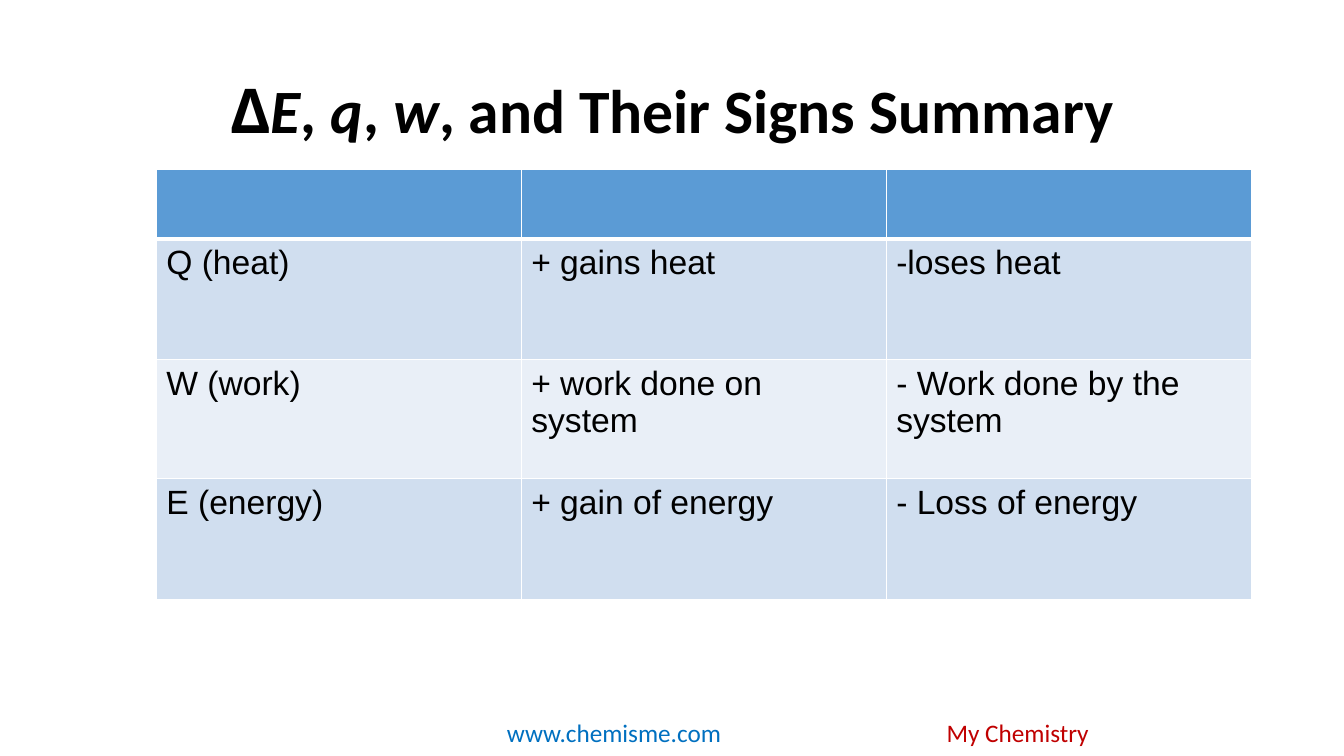
import pptx
import pptx.util
import pptx.dml.color
import pptx.enum.text
import pptx.oxml
import pptx.oxml.ns
from pptx.util import Inches

# Content
TITLE = [("Δ", False, "Open Sans"), ("E", True, "Calibri"), (", ", False, "Calibri"),
         ("q", True, "Calibri"), (", ", False, "Calibri"), ("w", True, "Calibri"),
         (", and Their Signs Summary", False, "Calibri")]
ROWS = [
    ("", "", ""),
    ("Q (heat)", "+ gains heat", "-loses heat"),
    ("W (work)", "+ work done on system", "- Work done by the system"),
    ("E (energy)", "+ gain of energy", "- Loss of energy"),
]
FOOTERS = [("www.chemisme.com", 4.93, "0070C0"), ("My Chemistry", 9.29, "C00000")]

# Table layout
COL_WIDTH = 3.62
ROW_HEIGHTS = [0.69, 1.2, 1.18, 1.2]
HEADER, BAND_DARK, BAND_LIGHT = "5B9BD5", "D0DEEF", "E9EFF7"


def color(value):
    return pptx.dml.color.RGBColor.from_string(value)


def add_run(p, text, size=24, font="Arial", fill="000000", bold=False, italic=False):
    r = p.add_run()
    r.text = text
    r.font.size = pptx.util.Pt(size)
    r.font.name = font
    r.font.color.rgb = color(fill)
    r.font.bold = bold
    r.font.italic = italic


def add_box(s, left, top, width, height):
    tf = s.shapes.add_textbox(*map(Inches, (left, top, width, height))).text_frame
    tf.word_wrap = True
    return tf


def set_borders(cell, bottom):
    tcPr = cell._tc.get_or_add_tcPr()
    widths = {"lnL": 1, "lnR": 1, "lnT": 1, "lnB": bottom}
    for i, (side, width) in enumerate(widths.items()):
        tcPr.insert(i, pptx.oxml.parse_xml(
            f'<a:{side} {pptx.oxml.ns.nsdecls("a")} w="{pptx.util.Pt(width)}">'
            f'<a:solidFill><a:srgbClr val="FFFFFF"/></a:solidFill></a:{side}>'))


prs = pptx.Presentation()
prs.slide_width, prs.slide_height = Inches(13.33), Inches(7.5)
s = prs.slides.add_slide(prs.slide_layouts[6])

# Footer
for text, left, fill in FOOTERS:
    tf = add_box(s, left, 7.07, 2.41, 0.4)
    add_run(tf.paragraphs[0], text, size=18, font="Calibri", fill=fill)

# Title
tf = add_box(s, 0.92, 0.4, 11.5, 1.45)
tf.vertical_anchor = pptx.enum.text.MSO_ANCHOR.MIDDLE
p = tf.paragraphs[0]
p.alignment = pptx.enum.text.PP_ALIGN.CENTER
p.line_spacing = 0.9
for text, italic, font in TITLE:
    add_run(p, text, size=44, font=font, bold=True, italic=italic)

# Sign table
cols = len(ROWS[0])
table = s.shapes.add_table(len(ROWS), cols, Inches(1.55), Inches(1.68),
                           Inches(COL_WIDTH * cols), Inches(sum(ROW_HEIGHTS))).table
for column in table.columns:
    column.width = Inches(COL_WIDTH)
for i, (texts, height) in enumerate(zip(ROWS, ROW_HEIGHTS)):
    table.rows[i].height = Inches(height)
    for j, text in enumerate(texts):
        cell = table.cell(i, j)
        cell.fill.solid()
        cell.fill.fore_color.rgb = color(
            HEADER if i == 0 else BAND_DARK if i % 2 else BAND_LIGHT)
        set_borders(cell, bottom=3 if i == 0 else 1)
        if text:
            add_run(cell.text_frame.paragraphs[0], text)

prs.save("out.pptx")
